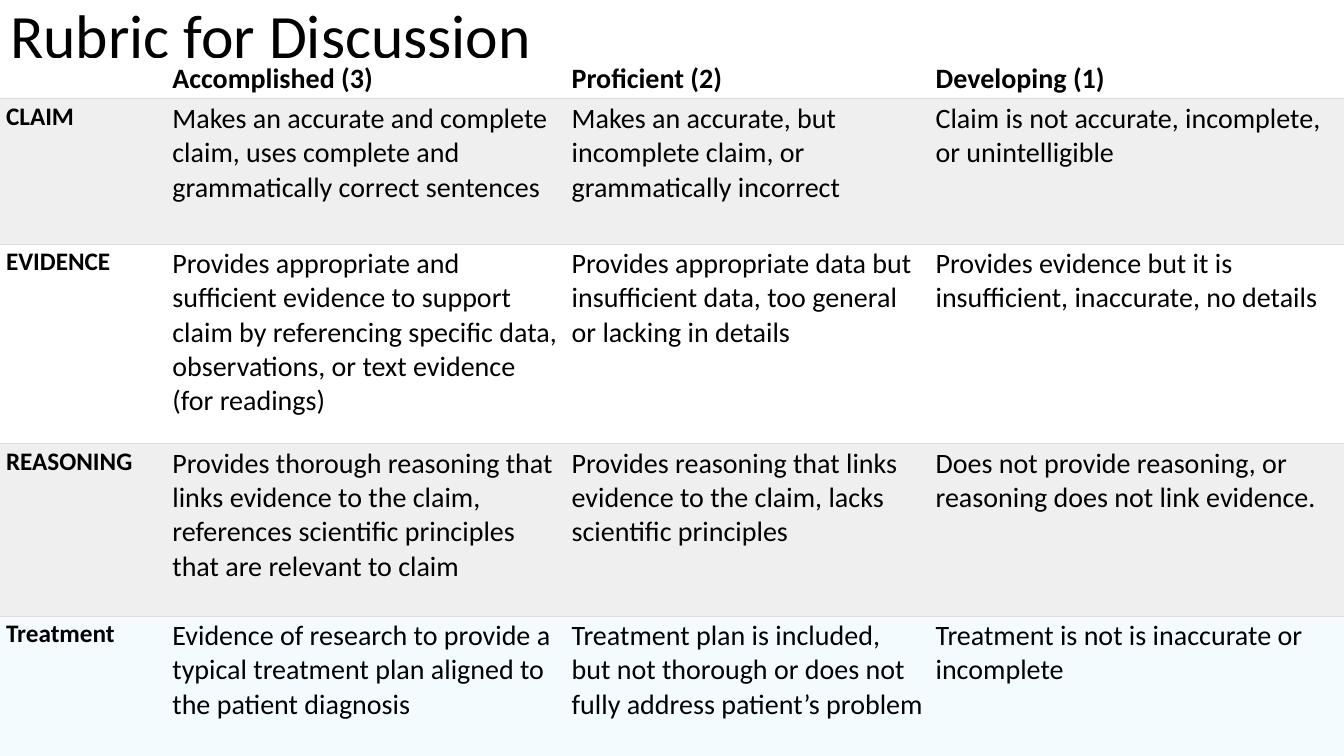
from dataclasses import dataclass

from lxml.etree import SubElement
from pptx import Presentation
from pptx.dml.color import RGBColor
from pptx.enum.text import MSO_ANCHOR, PP_ALIGN
from pptx.oxml.ns import qn
from pptx.table import _Cell
from pptx.text.text import _Paragraph
from pptx.util import Inches, Pt

COLORS = {"text": "000000", "white": "FFFFFF", "gray": "EFEFEF", "blue": "F3FBFF", "rule": "DDDDDD"}
NO_STYLE = "{2D5ABB26-0587-4C30-8999-92F81FD0307C}"
COL_WIDTHS = [1.65, 3.96, 3.61, 4.11]
MARGINS = {
    "margin_left": Inches(0.06),
    "margin_right": Inches(0.06),
    "margin_top": Inches(0.03),
    "margin_bottom": Inches(0.03),
}
LEVEL = {"size": Pt(20), "bold": True}
CRITERION = {"size": Pt(18), "bold": True}
DESCRIPTION = {"size": Pt(20), "bold": False}


@dataclass
class RubricRow:
    height: float
    fill: str
    texts: list[str]


HEADER = RubricRow(0.36, "white", ["", "Accomplished (3)", "Proficient (2)", "Developing (1)"])
CRITERIA = [
    RubricRow(1.44, "gray", [
        "CLAIM",
        "Makes an accurate and complete claim, uses complete and grammatically correct sentences",
        "Makes an accurate, but incomplete claim, or grammatically incorrect",
        "Claim is not accurate, incomplete, or unintelligible",
    ]),
    RubricRow(1.98, "white", [
        "EVIDENCE",
        "Provides appropriate and sufficient evidence to support claim by referencing "
        "specific data, observations, or text evidence (for readings)",
        "Provides appropriate data but insufficient data, too general or lacking in details",
        "Provides evidence but it is insufficient, inaccurate, no details",
    ]),
    RubricRow(1.71, "gray", [
        "REASONING",
        "Provides thorough reasoning that links evidence to the claim, references "
        "scientific principles that are relevant to claim",
        "Provides reasoning that links evidence to the claim, lacks scientific principles",
        "Does not provide reasoning, or reasoning does not link evidence.",
    ]),
    RubricRow(1.44, "blue", [
        "Treatment",
        "Evidence of research to provide a typical treatment plan aligned to the patient diagnosis",
        "Treatment plan is included, but not thorough or does not fully address patient’s problem",
        "Treatment is not is inaccurate or incomplete",
    ]),
]


def set_attrs(target: object, values: dict) -> None:
    for name, value in values.items():
        setattr(target, name, value)


def write(p: _Paragraph, text: str, font: dict) -> None:
    r = p.add_run()
    r.text = text
    set_attrs(r.font, {"name": "Calibri", **font})
    r.font.color.rgb = RGBColor.from_string(COLORS["text"])


def add_border(cell: _Cell, side: str) -> None:
    ln = SubElement(cell._tc.get_or_add_tcPr(), qn(f"a:{side}"), w=str(Pt(0.6)))
    SubElement(SubElement(ln, qn("a:solidFill")), qn("a:srgbClr"), val=COLORS["rule"])


def fill_cell(cell: _Cell, text: str, fill: str, font: dict, sides: list[str]) -> None:
    set_attrs(cell, MARGINS)
    for side in sides:
        add_border(cell, side)
    cell.fill.solid()
    cell.fill.fore_color.rgb = RGBColor.from_string(COLORS[fill])
    if text:
        write(cell.text_frame.paragraphs[0], text, font)


def main() -> None:
    prs = Presentation()
    set_attrs(prs, {"slide_width": Inches(13.33), "slide_height": Inches(7.5)})
    s = prs.slides.add_slide(prs.slide_layouts[5])

    title = s.shapes.title
    set_attrs(title, {"left": Inches(0), "top": Inches(-0.34),
                      "width": Inches(11.5), "height": Inches(1.45)})
    title.text_frame.vertical_anchor = MSO_ANCHOR.MIDDLE
    p = title.text_frame.paragraphs[0]
    set_attrs(p, {"alignment": PP_ALIGN.LEFT, "line_spacing": 0.9})
    write(p, "Rubric for Discussion", {"size": Pt(44)})

    rows = [HEADER, *CRITERIA]
    height = sum(row.height for row in rows)
    frame = s.shapes.add_table(len(rows), len(COL_WIDTHS), Inches(0), Inches(0.58),
                               Inches(sum(COL_WIDTHS)), Inches(height))
    table = frame.table
    set_attrs(table, {"first_row": False, "horz_banding": False})
    table._tbl.tblPr.find(qn("a:tableStyleId")).text = NO_STYLE
    for column, width in zip(table.columns, COL_WIDTHS):
        column.width = Inches(width)
    for i, row in enumerate(rows):
        table.rows[i].height = Inches(row.height)
        sides = ["lnT", "lnB"] if i else ["lnB"]
        for j, text in enumerate(row.texts):
            font = LEVEL if i == 0 else CRITERION if j == 0 else DESCRIPTION
            fill_cell(table.cell(i, j), text, row.fill, font, sides)

    prs.save("out.pptx")


if __name__ == "__main__":
    main()
